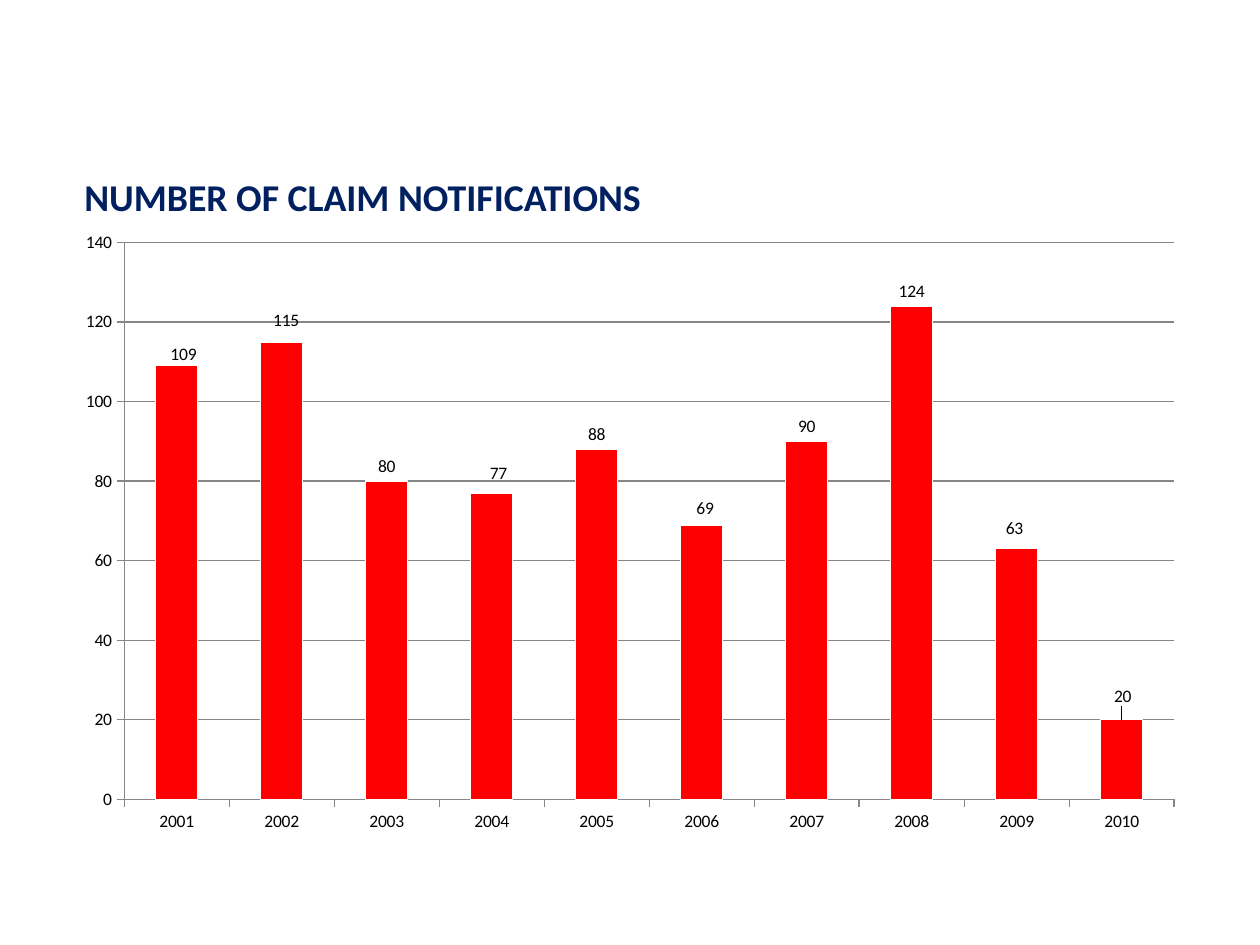
from dataclasses import dataclass

from lxml import etree
from pptx import Presentation
from pptx import util as u
from pptx.chart.data import CategoryChartData
from pptx.dml.color import RGBColor
from pptx.enum import chart as charts, text
from pptx.oxml.ns import qn

COLORS = {"title": "002060", "bar": "FF0000", "edge": "FFFFFF", "text": "000000", "line": "868686"}
FONT = "Calibri"


@dataclass(frozen=True)
class ClaimYear:
    year: str
    count: int
    shift_x: float = 0
    shift_y: float = 0


CLAIMS = [
    ClaimYear("2001", 109, 0.006, 0.005),
    ClaimYear("2002", 115, 0.004, -0.01),
    ClaimYear("2003", 80),
    ClaimYear("2004", 77, 0.006, -0.008),
    ClaimYear("2005", 88),
    ClaimYear("2006", 69, 0.003, -0.002),
    ClaimYear("2007", 90),
    ClaimYear("2008", 124),
    ClaimYear("2009", 63, -0.002, -0.008),
    ClaimYear("2010", 20, 0.001, -0.013),
]


def color(name: str) -> RGBColor:
    return RGBColor.from_string(COLORS[name])


def style_font(font, size: float, color_name: str, bold: bool = False) -> None:
    font.name = FONT
    font.size = u.Pt(size)
    font.bold = bold
    font.color.rgb = color(color_name)


def make_layout(**settings) -> etree._Element:
    layout = etree.Element(qn("c:layout"))
    manual = etree.SubElement(layout, qn("c:manualLayout"))
    for tag, value in settings.items():
        etree.SubElement(manual, qn(f"c:{tag}")).set("val", str(value))
    return layout


def add_title(slide, wording: str) -> None:
    shape = slide.shapes.add_textbox(u.Cm(1.45), u.Cm(3.43), u.Cm(20.8), u.Cm(1.04))
    frame = shape.text_frame
    frame.word_wrap = True
    frame.vertical_anchor = text.MSO_ANCHOR.MIDDLE
    run = frame.paragraphs[0].add_run()
    run.text = wording
    style_font(run.font, 21.6, "title", bold=True)


def shift_label(point, claim: ClaimYear) -> None:
    label = point.data_label
    style_font(label.font, 10, "text")
    label.position = charts.XL_LABEL_POSITION.OUTSIDE_END
    element = point._element.find(f"{qn('c:dLbls')}/{qn('c:dLbl')}[last()]")
    element.insert(1, make_layout(x=claim.shift_x, y=claim.shift_y))


def style_axis(axis) -> None:
    axis.major_tick_mark = charts.XL_TICK_MARK.OUTSIDE
    axis.minor_tick_mark = charts.XL_TICK_MARK.NONE
    axis.format.line.color.rgb = color("line")
    axis.format.line.width = u.Pt(0.75)
    style_font(axis.tick_labels.font, 10, "text")


def add_claims_chart(slide, claims: list[ClaimYear]) -> None:
    data = CategoryChartData()
    data.categories = [claim.year for claim in claims]
    data.add_series("Series 1", [claim.count for claim in claims])
    chart = slide.shapes.add_chart(
        charts.XL_CHART_TYPE.COLUMN_CLUSTERED,
        u.Cm(1.27), u.Cm(4.45), u.Cm(22.86), u.Cm(12.57), data,
    ).chart
    chart.has_title = False
    chart.has_legend = False
    style_font(chart.font, 10, "text")

    plot_area = chart._chartSpace.chart.plotArea
    for layout in plot_area.findall(qn("c:layout")):
        plot_area.remove(layout)
    plot_area.insert(0, make_layout(
        layoutTarget="inner", xMode="edge", yMode="edge", x=0.054, y=0.035, w=0.926, h=0.893))

    style_axis(chart.category_axis)
    value_axis = chart.value_axis
    style_axis(value_axis)
    value_axis.minimum_scale = 0
    value_axis.maximum_scale = 140
    value_axis.major_unit = 20
    value_axis.tick_labels.number_format = "#,##0;\\-#,##0"
    value_axis.tick_labels.number_format_is_linked = False
    value_axis.has_major_gridlines = True
    value_axis.major_gridlines.format.line.color.rgb = color("line")
    value_axis.major_gridlines.format.line.width = u.Pt(0.75)

    plot = chart.plots[0]
    plot.gap_width = 150
    plot.vary_by_categories = False
    series = plot.series[0]
    series.format.fill.solid()
    series.format.fill.fore_color.rgb = color("bar")
    series.format.line.color.rgb = color("edge")
    series.format.line.width = u.Pt(0.75)
    labels = series.data_labels
    labels.show_value = True
    labels.position = charts.XL_LABEL_POSITION.OUTSIDE_END
    style_font(labels.font, 10, "text")
    for index, claim in enumerate(claims):
        if claim.shift_x or claim.shift_y:
            point = series.points[index]
            shift_label(point, claim)


def main() -> None:
    presentation = Presentation()
    presentation.slide_width = u.Cm(25.4)
    presentation.slide_height = u.Cm(19.05)
    slide = presentation.slides.add_slide(presentation.slide_layouts[6])
    add_title(slide, "NUMBER OF CLAIM NOTIFICATIONS")
    add_claims_chart(slide, CLAIMS)
    presentation.save("out.pptx")


if __name__ == "__main__":
    main()
